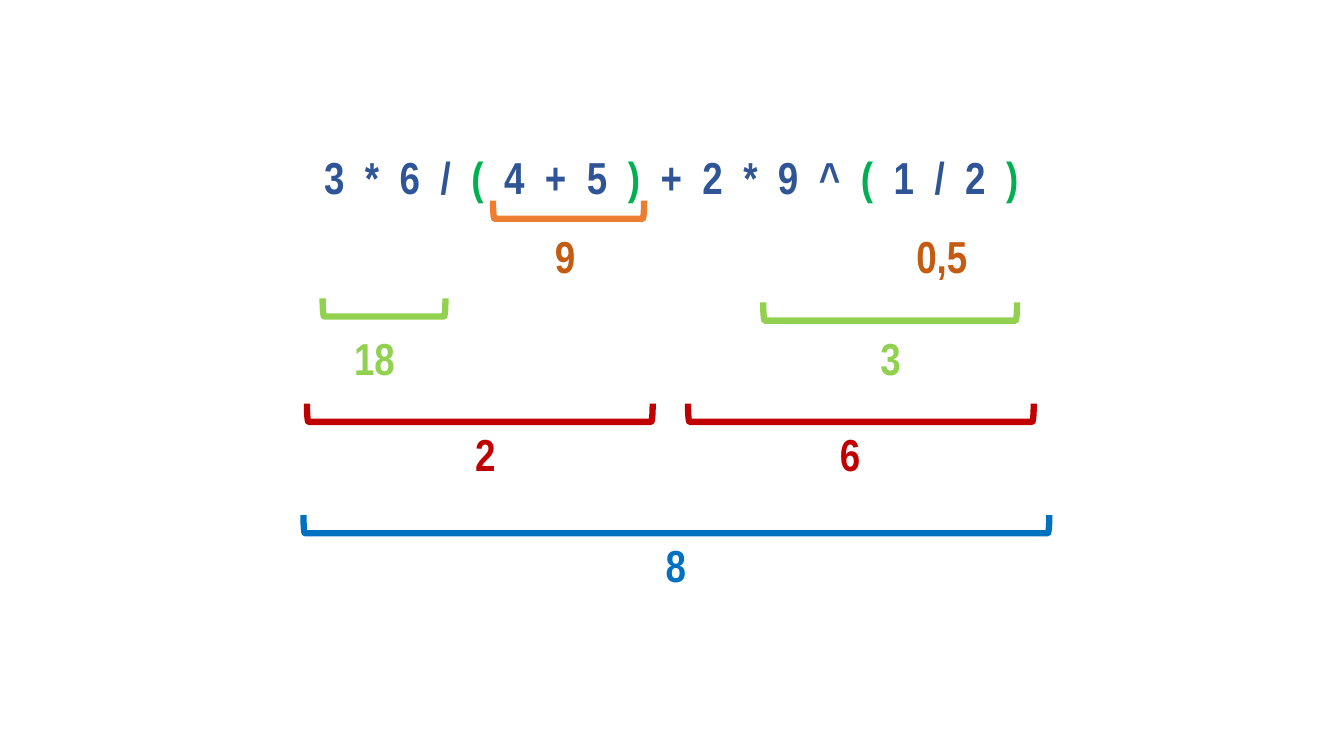
from pptx import Presentation, util as u
from pptx.dml.color import RGBColor
from pptx.enum import shapes, text

COLORS = {
    "expression": "2F5597",
    "parenthesis": "00B050",
    "bracket": "ED7D31",
    "inner": "C55A11",
    "product": "92D050",
    "term": "C00000",
    "total": "0070C0",
}


def add_run(paragraph, content, *, font, size, color, bold=True):
    run = paragraph.add_run()
    run.text = content
    run.font.name = font
    run.font.size = u.Pt(size)
    run.font.bold = bold
    run.font.color.rgb = RGBColor.from_string(COLORS[color])


class EvaluationSlide:
    font = "Arial Narrow"
    size = 32
    text_height = 46.1
    bracket_depth = 13
    bracket_line = 4.5

    def __init__(self, slide):
        self.slide = slide

    def centered_text(self, center, top, width, parts):
        box = self.slide.shapes.add_textbox(
            u.Pt(center - width / 2), u.Pt(top), u.Pt(width), u.Pt(self.text_height))
        frame = box.text_frame
        frame.word_wrap = True
        frame.auto_size = text.MSO_AUTO_SIZE.SHAPE_TO_FIT_TEXT
        paragraph = frame.paragraphs[0]
        paragraph.alignment = text.PP_ALIGN.CENTER
        for content, color in parts:
            add_run(paragraph, content, font=self.font, size=self.size, color=color)

    def bracket(self, center, middle, span, color):
        bracket = self.slide.shapes.add_shape(
            shapes.MSO_SHAPE.RIGHT_BRACKET,
            u.Pt(center - self.bracket_depth / 2), u.Pt(middle - span / 2),
            u.Pt(self.bracket_depth), u.Pt(span))
        bracket.rotation = 90
        bracket.shadow.inherit = False
        bracket.fill.background()
        bracket.line.color.rgb = RGBColor.from_string(COLORS[color])
        bracket.line.width = u.Pt(self.bracket_line)


def main():
    deck = Presentation()
    deck.slide_width, deck.slide_height = u.Pt(960), u.Pt(540)
    evaluation = EvaluationSlide(deck.slides.add_slide(deck.slide_layouts[6]))

    evaluation.centered_text(479.5, 103.7, 527, [
        ("3  *  6  /  ", "expression"),
        ("(", "parenthesis"),
        ("  4  +  5  ", "expression"),
        (") ", "parenthesis"),
        (" +  2  *  9  ^  ", "expression"),
        ("( ", "parenthesis"),
        (" 1  /  2  ", "expression"),
        (")", "parenthesis"),
    ])

    brackets = [
        (406.1, 149.8, 108, "bracket"),
        (274.3, 219.6, 87.8, "product"),
        (635.8, 222.5, 181.4, "product"),
        (342.7, 294.8, 247, "term"),
        (614.9, 294.8, 247, "term"),
        (483.1, 374.4, 532.8, "total"),
    ]
    for center, middle, span, color in brackets:
        evaluation.bracket(center, middle, span, color)

    result_rows = [
        (159.8, "inner", [("9", 403.6, 45.4), ("0,5", 672.8, 62.6)]),
        (232.6, "product", [("18", 267.5, 45.4), ("3", 636.1, 45.4)]),
        (301, "term", [("2", 346.7, 45.4), ("6", 607.3, 45.4)]),
        (380.9, "total", [("8", 482.8, 45.4)]),
    ]
    for top, color, results in result_rows:
        for value, center, width in results:
            evaluation.centered_text(center, top, width, [(value, color)])

    deck.save("out.pptx")


if __name__ == "__main__":
    main()
